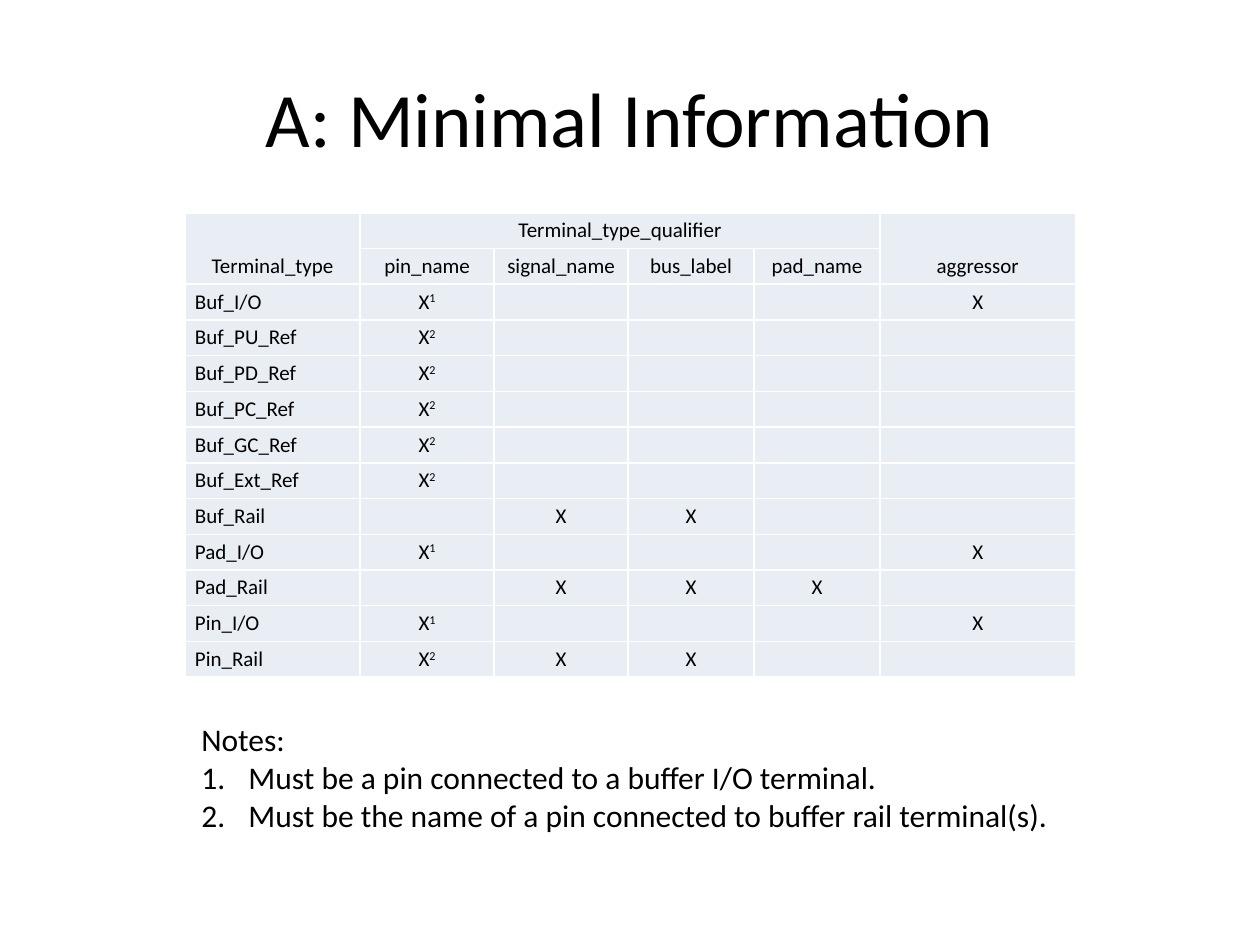
import dataclasses

import lxml.etree
import pptx
import pptx.dml.color
import pptx.enum.text
import pptx.oxml.ns
import pptx.util

Cm = pptx.util.Cm
Pt = pptx.util.Pt
Align = pptx.enum.text.PP_ALIGN
Anchor = pptx.enum.text.MSO_ANCHOR
qn = pptx.oxml.ns.qn


@dataclasses.dataclass(frozen=True)
class Theme:
    font: str = "Calibri"
    text: str = "000000"
    cell: str = "E9EDF4"
    border: str = "FFFFFF"
    title_size: int = 44
    table_size: int = 12
    list_size: int = 18


COLUMN_WIDTHS = (3.53, 2.7, 2.7, 2.54, 2.54, 3.94)
ROW_HEIGHT = 0.72
HEADER_ROWS = (
    ("Terminal_type", "Terminal_type_qualifier", "", "", "", "aggressor"),
    ("", "pin_name", "signal_name", "bus_label", "pad_name", ""),
)
MERGES = (((0, 0), (1, 0)), ((0, 1), (0, 4)), ((0, 5), (1, 5)))
TERMINALS = (
    ("Buf_I/O", "X1", "", "", "", "X"),
    ("Buf_PU_Ref", "X2", "", "", "", ""),
    ("Buf_PD_Ref", "X2", "", "", "", ""),
    ("Buf_PC_Ref", "X2", "", "", "", ""),
    ("Buf_GC_Ref", "X2", "", "", "", ""),
    ("Buf_Ext_Ref", "X2", "", "", "", ""),
    ("Buf_Rail", "", "X", "X", "", ""),
    ("Pad_I/O", "X1", "", "", "", "X"),
    ("Pad_Rail", "", "X", "X", "X", ""),
    ("Pin_I/O", "X1", "", "", "", "X"),
    ("Pin_Rail", "X2", "X", "X", "", ""),
)
REMARKS = (
    "Must be a pin connected to a buffer I/O terminal.",
    "Must be the name of a pin connected to buffer rail terminal(s).",
)


class SlideBuilder:
    """Draw styled elements on the current slide."""

    def __init__(self, page, theme):
        self.page = page
        self.theme = theme

    def style(self, para, size):
        for span in para.runs:
            span.font.name = self.theme.font
            span.font.size = Pt(size)
            span.font.color.rgb = pptx.dml.color.RGBColor.from_string(self.theme.text)

    def title(self, text, left, top, width, height):
        box = self.page.shapes.add_textbox(Cm(left), Cm(top), Cm(width), Cm(height))
        frame = box.text_frame
        frame.word_wrap = True
        frame.vertical_anchor = Anchor.MIDDLE
        frame.text = text
        frame.paragraphs[0].alignment = Align.CENTER
        self.style(frame.paragraphs[0], self.theme.title_size)

    def borders(self, cell):
        properties = cell._tc.get_or_add_tcPr()
        for side in ("a:lnL", "a:lnR", "a:lnT", "a:lnB"):
            line = lxml.etree.SubElement(properties, qn(side), w=str(Pt(1)))
            fill = lxml.etree.SubElement(line, qn("a:solidFill"))
            lxml.etree.SubElement(fill, qn("a:srgbClr"), val=self.theme.border)

    def cell(self, cell, text, alignment):
        self.borders(cell)
        cell.fill.solid()
        cell.fill.fore_color.rgb = pptx.dml.color.RGBColor.from_string(self.theme.cell)
        cell.margin_left = cell.margin_right = Cm(0.2)
        cell.margin_top = cell.margin_bottom = Cm(0.1)
        para = cell.text_frame.paragraphs[0]
        para.alignment = alignment
        para.space_after = Pt(4)
        if not text:
            size = str(self.theme.table_size * 100)
            lxml.etree.SubElement(para._p, qn("a:endParaRPr"), sz=size)
            return
        has_mark = text in ("X1", "X2")
        para.text = text[0] if has_mark else text
        if has_mark:
            span = para.add_run()
            span.text = text[1]
            span.font._element.set("baseline", "30000")
        self.style(para, self.theme.table_size)

    def table(self, rows, header_count, left, top):
        frame = self.page.shapes.add_table(
            len(rows), len(COLUMN_WIDTHS), Cm(left), Cm(top),
            Cm(sum(COLUMN_WIDTHS)), Cm(ROW_HEIGHT * len(rows)))
        table = frame.table
        table.first_row = table.horz_banding = False
        for column, width in zip(table.columns, COLUMN_WIDTHS):
            column.width = Cm(width)
        for row_index, values in enumerate(rows):
            table.rows[row_index].height = Cm(ROW_HEIGHT)
            for column_index, text in enumerate(values):
                is_name = column_index == 0 and row_index >= header_count
                alignment = Align.LEFT if is_name else Align.CENTER
                self.cell(table.cell(row_index, column_index), text, alignment)
        for first, last in MERGES:
            table.cell(*first).merge(table.cell(*last))
            if last[0] > first[0]:
                table.cell(*first).vertical_anchor = Anchor.BOTTOM

    def numbered_list(self, heading, items, left, top, width, height):
        box = self.page.shapes.add_textbox(Cm(left), Cm(top), Cm(width), Cm(height))
        frame = box.text_frame
        frame.word_wrap = False
        frame.auto_size = pptx.enum.text.MSO_AUTO_SIZE.SHAPE_TO_FIT_TEXT
        frame.text = "\n".join((heading, *items))
        for para in frame.paragraphs:
            self.style(para, self.theme.list_size)
        indent = Cm(0.95)
        for para in frame.paragraphs[1:]:
            properties = para._p.get_or_add_pPr()
            properties.set("marL", str(indent))
            properties.set("indent", str(-indent))
            lxml.etree.SubElement(properties, qn("a:buFont"), typeface="+mj-lt")
            lxml.etree.SubElement(properties, qn("a:buAutoNum"), type="arabicPeriod")


def main():
    deck = pptx.Presentation()
    deck.slide_width, deck.slide_height = Cm(25.4), Cm(19.05)
    page = deck.slides.add_slide(deck.slide_layouts[6])
    builder = SlideBuilder(page, Theme())
    builder.title("A: Minimal Information", 1.27, 0.76, 22.86, 3.18)
    builder.table(HEADER_ROWS + TERMINALS, len(HEADER_ROWS), 3.73, 4.29)
    builder.numbered_list("Notes:", REMARKS, 3.81, 14.4, 17.8, 2.57)
    deck.save("out.pptx")


if __name__ == "__main__":
    main()
